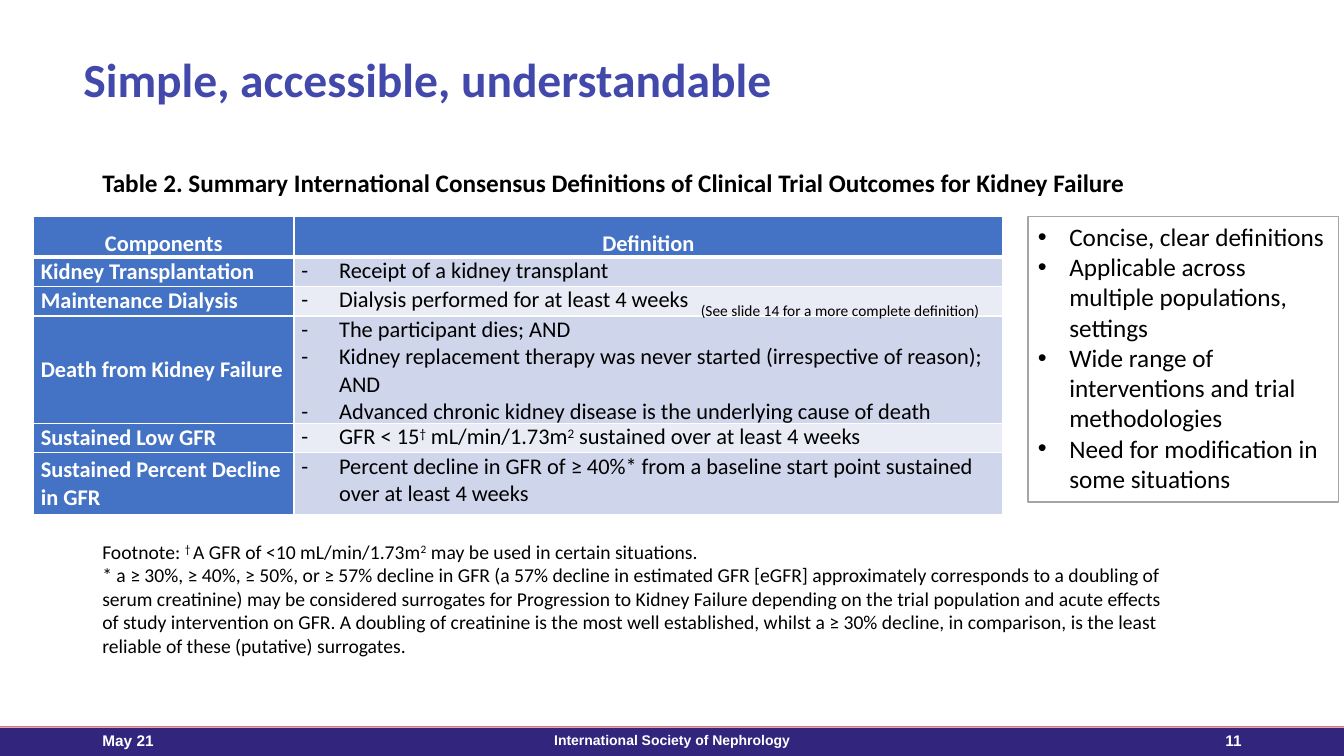
from lxml import etree
from pptx import Presentation
from pptx.dml.color import RGBColor
from pptx.enum.shapes import MSO_CONNECTOR, MSO_SHAPE
from pptx.enum.text import MSO_ANCHOR, PP_ALIGN
from pptx.oxml.ns import qn
from pptx.util import Emu, Pt

PX = 9525
LEFT, CENTER, RIGHT = PP_ALIGN.LEFT, PP_ALIGN.CENTER, PP_ALIGN.RIGHT
TOP, MIDDLE = MSO_ANCHOR.TOP, MSO_ANCHOR.MIDDLE
RECTANGLE = MSO_SHAPE.RECTANGLE
STRAIGHT = MSO_CONNECTOR.STRAIGHT
BLACK, WHITE, HEADER_BLUE = "000000", "FFFFFF", "4472C4"
BANDS = ["CFD5EA", "E9EBF5"]

HEADINGS = ["Components", "Definition"]
OUTCOMES = [
    ("Kidney Transplantation", ["Receipt of a kidney transplant"]),
    ("Maintenance Dialysis", ["Dialysis performed for at least 4 weeks"]),
    ("Death from Kidney Failure", [
        "The participant dies; AND",
        "Kidney replacement therapy was never started (irrespective of reason); AND",
        "Advanced chronic kidney disease is the underlying cause of death"]),
    ("Sustained Low GFR",
     ["GFR < 15^†^ mL/min/1.73m^2^ sustained over at least 4 weeks"]),
    ("Sustained Percent Decline in GFR",
     ["Percent decline in GFR of ≥ 40%* from a baseline start point sustained "
      "over at least 4 weeks"]),
]
FOOTNOTE = "Footnote: ^† ^A GFR of <10 mL/min/1.73m^2^ may be used in certain situations."
SURROGATES = (
    "* a ≥ 30%, ≥ 40%, ≥ 50%, or ≥ 57% decline in GFR (a 57% decline in estimated "
    "GFR [eGFR] approximately corresponds to a doubling of serum creatinine) may be "
    "considered surrogates for Progression to Kidney Failure depending on the trial "
    "population and acute effects of study intervention on GFR. A doubling of "
    "creatinine is the most well established, whilst a ≥ 30% decline, in comparison, "
    "is the least reliable of these (putative) surrogates.")
STRENGTHS = [
    "Concise, clear definitions",
    "Applicable across multiple populations, settings",
    "Wide range of interventions and trial methodologies",
    "Need for modification in some situations",
]


def px(length):
    return Emu(length * PX)


def color(value):
    return RGBColor.from_string(value)


def add_bullet(para, mark, indent):
    properties = para._p.get_or_add_pPr()
    properties.set("marL", str(px(indent)))
    properties.set("indent", str(-px(indent)))
    font = etree.SubElement(properties, qn("a:buFont"))
    font.set("typeface", "Arial" if mark == "•" else "Calibri")
    etree.SubElement(properties, qn("a:buChar")).set("char", mark)


def write(frame, lines, size, ink=BLACK, bold=False, face="Calibri", align=LEFT,
          anchor=TOP, spacing=None, bullet=None):
    frame.word_wrap = True
    frame.vertical_anchor = anchor
    for index, line in enumerate(lines):
        para = frame.paragraphs[0] if index == 0 else frame.add_paragraph()
        para.alignment = align
        if spacing and index == 0:
            para.line_spacing = spacing
        if bullet:
            add_bullet(para, *bullet)
        for part, text in enumerate(line.split("^")):
            if not text:
                continue
            span = para.add_run()
            span.text = text
            span.font.name = face
            span.font.size = Pt(size)
            span.font.bold = bold
            span.font.color.rgb = color(ink)
            if part % 2:
                span.font._element.set("baseline", "30000")


def add_text(page, box, lines, size, **style):
    shape = page.shapes.add_textbox(*map(px, box))
    write(shape.text_frame, lines, size, **style)


def add_panel(page, box, fill):
    panel = page.shapes.add_shape(RECTANGLE, *map(px, box))
    panel.shadow.inherit = False
    panel.fill.solid()
    panel.fill.fore_color.rgb = color(fill)
    panel.line.fill.background()
    return panel


def add_footer(page, box):
    left, top, width, height = box
    add_panel(page, box, "32257E")
    rule = page.shapes.add_connector(
        STRAIGHT, px(left), px(top - 1), px(left + width), px(top - 1))
    rule.line.color.rgb = color("FE7055")
    rule.line.width = Pt(0.75)
    etree.SubElement(rule._element.spPr, qn("a:effectLst"))
    labels = [("May 21", 88, 288, 11, LEFT),
              ("International Society of Nephrology", 424, 432, 10, CENTER),
              ("11", 904, 288, 11, RIGHT)]
    for text, offset, span_width, size, align in labels:
        add_text(page, (left + offset, top - 7, span_width, 38), [text], size,
                 ink=WHITE, bold=True, face="Arial", align=align, anchor=MIDDLE)


def style_cell(cell, fill, bottom):
    cell.margin_left = cell.margin_right = px(7)
    cell.margin_top = cell.margin_bottom = 0
    properties = cell._tc.get_or_add_tcPr()
    for side, width in (("L", 1), ("R", 1), ("T", 1), ("B", bottom)):
        border = etree.SubElement(properties, qn("a:ln" + side))
        border.set("w", str(Pt(width)))
        paint = etree.SubElement(border, qn("a:solidFill"))
        etree.SubElement(paint, qn("a:srgbClr")).set("val", WHITE)
    cell.fill.solid()
    cell.fill.fore_color.rgb = color(fill)


def add_outcomes(page, box):
    widths, heights = [248, 675], [39, 28, 28, 90, 28, 59]
    table = page.shapes.add_table(len(heights), len(widths), *map(px, box)).table
    for column, width in zip(table.columns, widths):
        column.width = px(width)
    for row, height in zip(table.rows, heights):
        row.height = px(height)
    for column, heading in enumerate(HEADINGS):
        cell = table.cell(0, column)
        style_cell(cell, HEADER_BLUE, 3)
        write(cell.text_frame, [heading], 16, ink=WHITE, bold=True, align=CENTER,
              spacing=1.5)
    for row, (component, definition) in enumerate(OUTCOMES, 1):
        name, meaning = table.cell(row, 0), table.cell(row, 1)
        style_cell(name, HEADER_BLUE, 1)
        write(name.text_frame, [component], 16, ink=WHITE, bold=True)
        name.vertical_anchor = MIDDLE
        style_cell(meaning, BANDS[(row - 1) % 2], 1)
        write(meaning.text_frame, definition, 16, bullet=("-", 36))


def add_strengths(page, box):
    panel = add_panel(page, box, WHITE)
    panel.line.color.rgb = color("A5A5A5")
    panel.line.width = Pt(1)
    write(panel.text_frame, STRENGTHS, 18, bullet=("•", 30))


def main():
    deck = Presentation()
    deck.slide_width, deck.slide_height = px(1280), px(720)
    page = deck.slides.add_slide(deck.slide_layouts[6])
    add_footer(page, (0, 693, 1280, 27))
    add_text(page, (70, 37, 900, 82), ["Simple, accessible, understandable"], 34,
             ink="4249AA", bold=True, anchor=MIDDLE, spacing=0.9)
    add_text(page, (88, 158, 1104, 40),
             ["Table 2. Summary International Consensus Definitions of Clinical Trial "
              "Outcomes for Kidney Failure"], 18, bold=True, spacing=0.9)
    add_outcomes(page, (32, 206, 923, 272))
    add_text(page, (88, 498, 1039, 134), [FOOTNOTE, SURROGATES], 14, spacing=1.5)
    add_strengths(page, (979, 206, 296, 272))
    add_text(page, (658, 282, 297, 28),
             ["(See slide 14 for a more complete definition)"], 11)
    deck.save("out.pptx")


if __name__ == "__main__":
    main()
